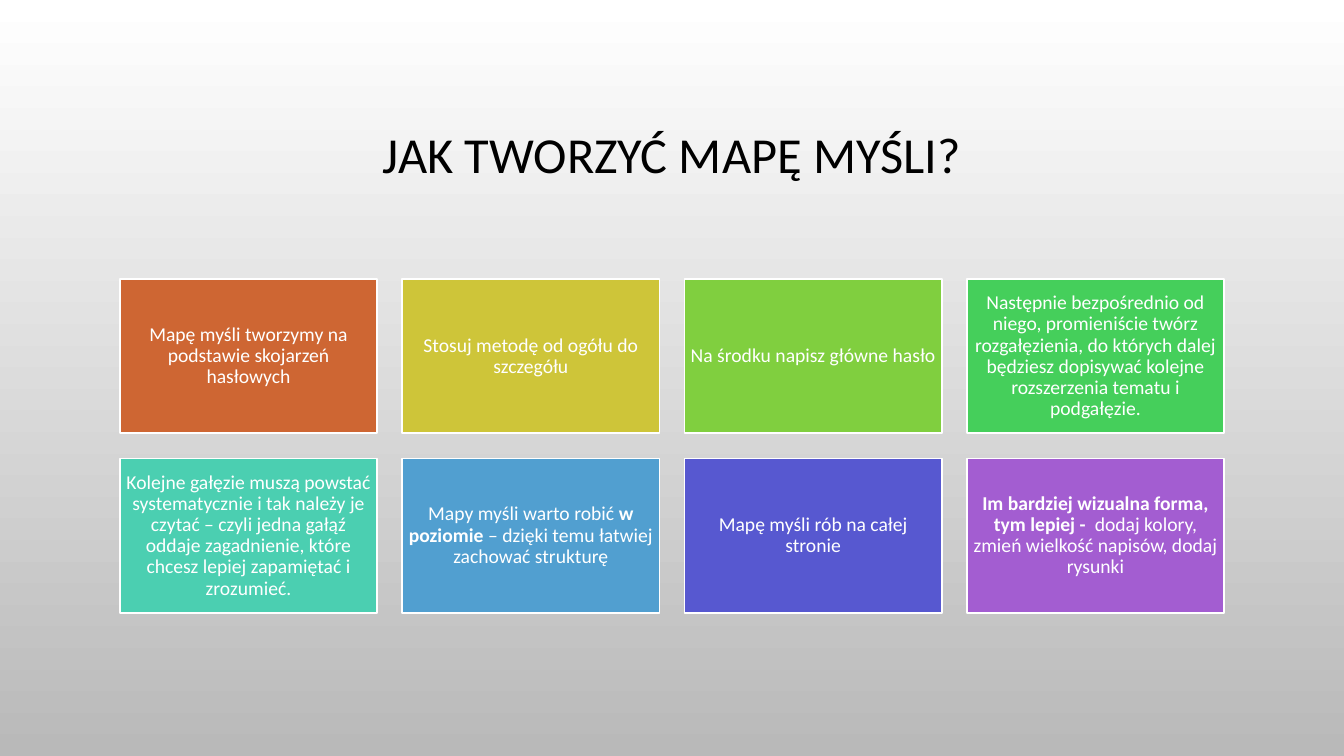
from pptx import Presentation
from pptx.dml.color import RGBColor
from pptx.enum.shapes import MSO_SHAPE
from pptx.enum.text import MSO_ANCHOR, PP_ALIGN
from pptx.util import Inches, Pt

RECTANGLE = MSO_SHAPE.RECTANGLE
MIDDLE = MSO_ANCHOR.MIDDLE
CENTER = PP_ALIGN.CENTER
FONT = "Calibri"
COLUMNS = 4
CARD_WIDTH, CARD_HEIGHT = 2.55, 1.53
COLUMN_STEP, ROW_STEP = 2.8, 1.78

COLORS = {
    "sky": "FFFFFF",
    "ground": "B9B9B9",
    "title": "000000",
    "card_text": "FFFFFF",
    "card_border": "FFFFFF",
    "orange": "CE6633",
    "yellow": "CEC539",
    "lime": "80CF3F",
    "green": "45CF5B",
    "teal": "4BCFB1",
    "blue": "519FD0",
    "indigo": "5758D0",
    "violet": "A35DD1",
}

TIPS = [
    ("orange", [("Mapę myśli tworzymy na podstawie skojarzeń hasłowych", False)]),
    ("yellow", [("Stosuj metodę od ogółu do szczegółu", False)]),
    ("lime", [("Na środku napisz główne hasło", False)]),
    ("green", [("Następnie bezpośrednio od niego, promieniście twórz rozgałęzienia, "
                "do których dalej będziesz dopisywać kolejne rozszerzenia tematu "
                "i podgałęzie.", False)]),
    ("teal", [("Kolejne gałęzie muszą powstać systematycznie i tak należy je czytać – "
               "czyli jedna gałąź oddaje zagadnienie, które chcesz lepiej zapamiętać "
               "i zrozumieć.", False)]),
    ("blue", [("Mapy myśli warto robić ", False), ("w poziomie", True),
              (" – dzięki temu łatwiej zachować strukturę", False)]),
    ("indigo", [("Mapę myśli rób na całej stronie", False)]),
    ("violet", [("Im bardziej wizualna forma, tym lepiej -  ", True),
                ("dodaj kolory, zmień wielkość napisów, dodaj rysunki", False)]),
]


def rgb(name):
    """Return the palette colour called name."""
    return RGBColor.from_string(COLORS[name])


def paint_background(slide):
    """Fill the slide with a gradient running from top to bottom."""
    fill = slide.background.fill
    fill.gradient()
    fill.gradient_angle = 270
    for stop, position, name in zip(fill.gradient_stops, (0, 1), ("sky", "ground")):
        stop.position = position
        stop.color.rgb = rgb(name)


def write(frame, runs, size, color):
    """Write one centred paragraph of (text, bold) runs."""
    frame.word_wrap = True
    frame.vertical_anchor = MIDDLE
    paragraph = frame.paragraphs[0]
    paragraph.alignment = CENTER
    paragraph.line_spacing = 0.9
    paragraph.font.name = FONT
    paragraph.font.size = Pt(size)
    paragraph.font.color.rgb = rgb(color)
    for text, bold in runs:
        run = paragraph.add_run()
        run.text = text
        run.font.bold = bold


def add_title(slide, left, top, width, height):
    """Place the slide title in the given box."""
    title = slide.shapes.add_textbox(*map(Inches, (left, top, width, height)))
    write(title.text_frame, [("JAK TWORZYĆ MAPĘ MYŚLI?", False)], 36, "title")


def add_card(slide, left, top, color, runs):
    """Place one coloured tip card with its corner at left, top."""
    card = slide.shapes.add_shape(
        RECTANGLE, *map(Inches, (left, top, CARD_WIDTH, CARD_HEIGHT)))
    card.shadow.inherit = False
    card.fill.solid()
    card.fill.fore_color.rgb = rgb(color)
    card.line.color.rgb = rgb("card_border")
    card.line.width = Pt(1.25)
    frame = card.text_frame
    frame.margin_left = frame.margin_right = Inches(0.06)
    frame.margin_top = frame.margin_bottom = Inches(0.06)
    write(frame, runs, 14, "card_text")


def add_tips(slide, left, top):
    """Lay the tip cards out row by row from left, top."""
    for index, (color, runs) in enumerate(TIPS):
        row, column = divmod(index, COLUMNS)
        add_card(slide, left + column * COLUMN_STEP, top + row * ROW_STEP, color, runs)


def main():
    """Build and save the slide."""
    deck = Presentation()
    deck.slide_width, deck.slide_height = Inches(13.33), Inches(7.5)
    slide = deck.slides.add_slide(deck.slide_layouts[6])
    paint_background(slide)
    add_title(slide, 1, 0.68, 11.33, 1.75)
    add_tips(slide, 1.19, 2.77)
    deck.save("out.pptx")


if __name__ == "__main__":
    main()
